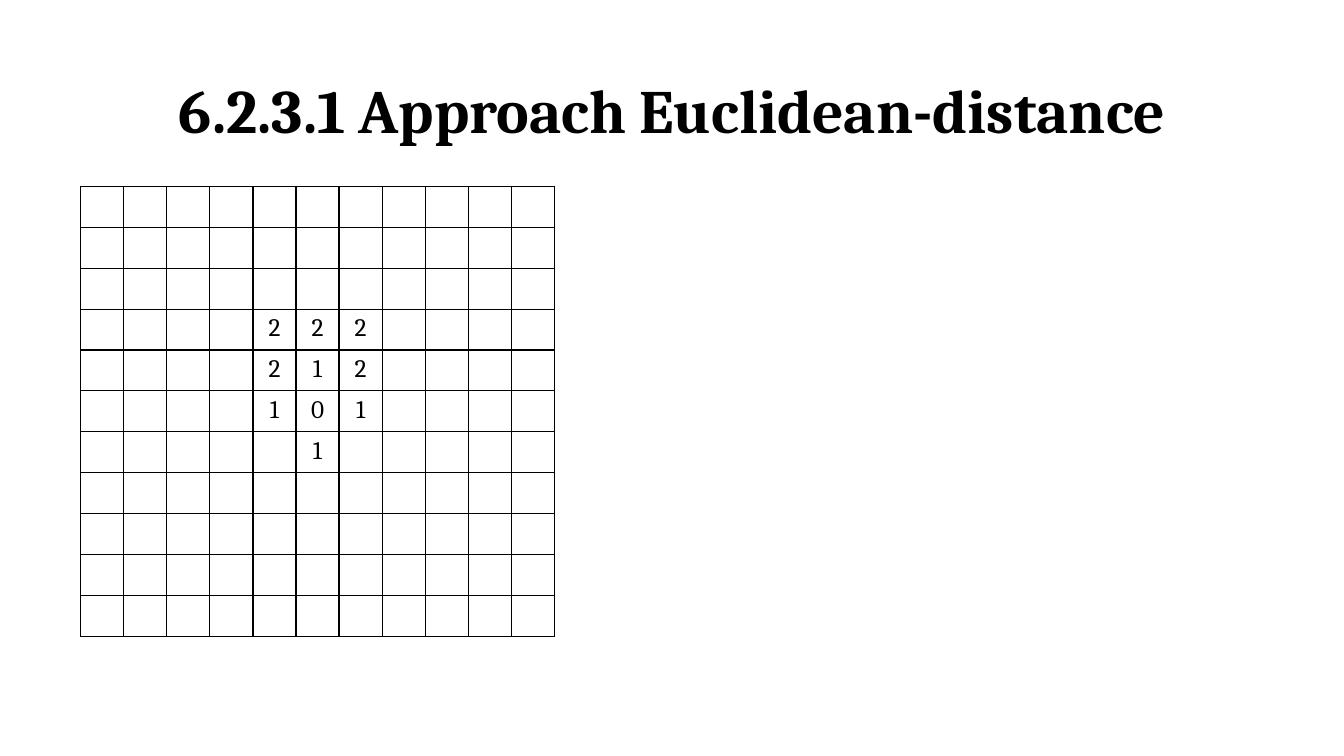
from dataclasses import dataclass

from lxml import etree
from pptx import Presentation
from pptx.dml.color import RGBColor
from pptx.enum import text
from pptx.oxml import ns
from pptx.util import Inches, Pt

COLORS = {"ink": "000000"}
FONT = "Cambria"
GRID_SIZE = 11
GRID_WIDTH, GRID_HEIGHT = 4.7, 4.46


@dataclass(frozen=True)
class DistanceRow:
    row: int
    first_column: int
    distances: str


DISTANCE_ROWS = [
    DistanceRow(3, 4, "222"),
    DistanceRow(4, 4, "212"),
    DistanceRow(5, 4, "101"),
    DistanceRow(6, 5, "1"),
]


def add_text(paragraph, content: str, size: int, bold: bool = False) -> None:
    paragraph.alignment = text.PP_ALIGN.CENTER
    run = paragraph.add_run()
    run.text = content
    run.font.name = FONT
    run.font.size = Pt(size)
    run.font.bold = bold
    run.font.color.rgb = RGBColor.from_string(COLORS["ink"])


def add_borders(cell, width: int = 1) -> None:
    """Line all four sides; borders must precede the fill in the XML."""
    properties = cell._tc.get_or_add_tcPr()
    for position, side in enumerate(("lnL", "lnR", "lnT", "lnB")):
        line = etree.Element(ns.qn(f"a:{side}"), w=str(Pt(width)))
        fill = etree.SubElement(line, ns.qn("a:solidFill"))
        etree.SubElement(fill, ns.qn("a:srgbClr"), val=COLORS["ink"])
        properties.insert(position, line)


def add_title(slide) -> None:
    title = slide.shapes.title
    title.left, title.top = Inches(0.92), Inches(0.4)
    title.width, title.height = Inches(11.5), Inches(1.45)
    title.text_frame.vertical_anchor = text.MSO_ANCHOR.MIDDLE
    heading = title.text_frame.paragraphs[0]
    heading.line_spacing = 0.9
    add_text(heading, "6.2.3.1 Approach Euclidean-distance", 44, bold=True)


def add_distance_grid(slide) -> None:
    grid = slide.shapes.add_table(
        GRID_SIZE, GRID_SIZE, Inches(0.8), Inches(1.85),
        Inches(GRID_WIDTH), Inches(GRID_HEIGHT),
    ).table
    grid.first_row = grid.horz_banding = False
    for column in grid.columns:
        column.width = Inches(GRID_WIDTH / GRID_SIZE)
    for row in grid.rows:
        row.height = Inches(GRID_HEIGHT / GRID_SIZE)
    for cell in grid.iter_cells():
        cell.fill.background()
        add_borders(cell)
    for entry in DISTANCE_ROWS:
        for column, distance in enumerate(entry.distances, entry.first_column):
            cell = grid.cell(entry.row, column)
            add_text(cell.text_frame.paragraphs[0], distance, 18)


def main() -> None:
    presentation = Presentation()
    presentation.slide_width = Inches(13.33)
    presentation.slide_height = Inches(7.5)
    slide = presentation.slides.add_slide(presentation.slide_layouts[5])
    add_title(slide)
    add_distance_grid(slide)
    presentation.save("out.pptx")


if __name__ == "__main__":
    main()
